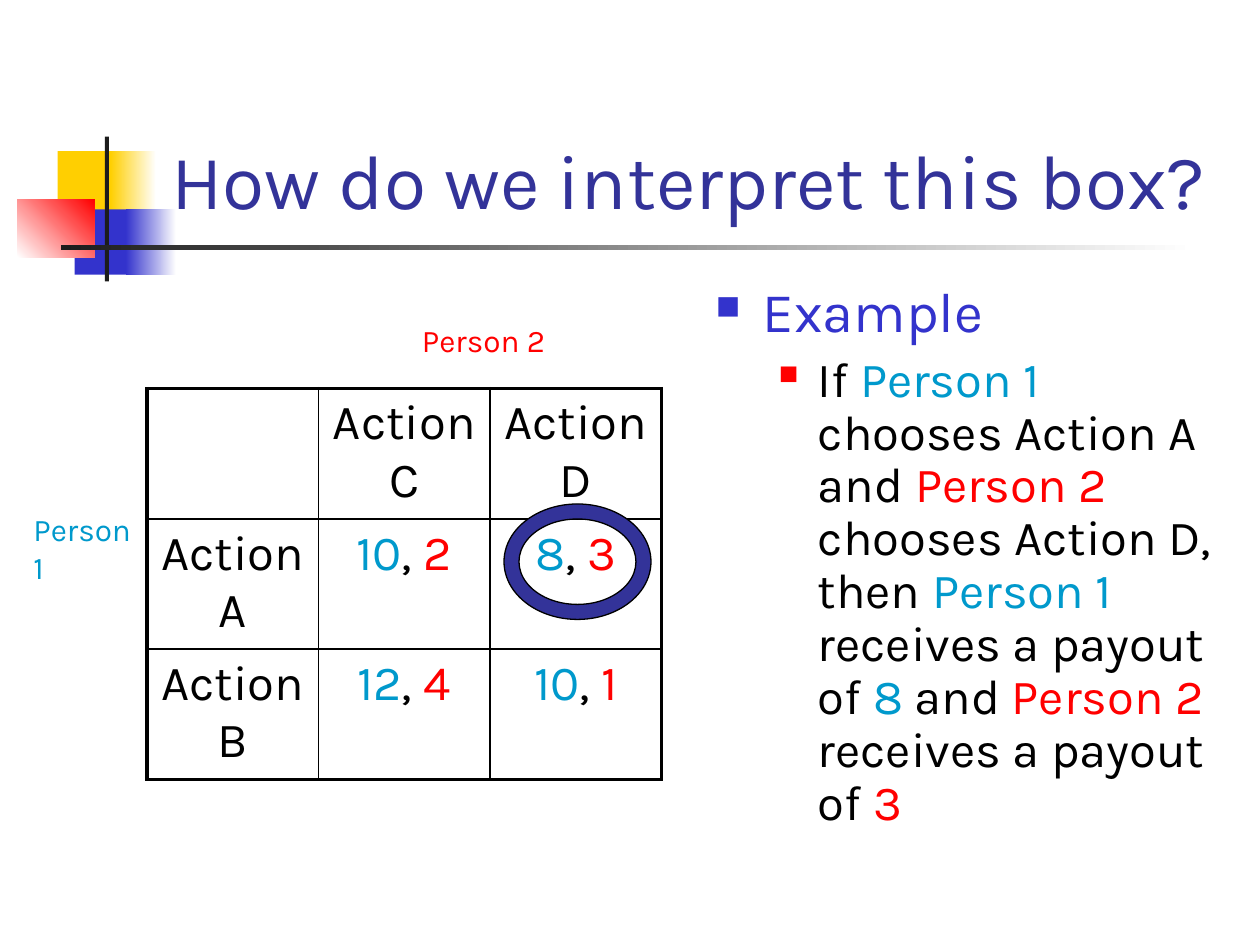
from lxml import etree
from pptx import Presentation
from pptx import util as u
from pptx.dml.color import RGBColor
from pptx.enum import shapes, text
from pptx.oxml.ns import qn

Pt = u.Pt

THEME = {
    "font": "Karla",
    "title": "333399", "heading": "3333CC", "body": "000000",
    "person 1": "0099CC", "person 2": "FF0000",
    "yellow": "FFCF01", "blue": "3333CC", "red": "FF0000",
    "dark": "1C1C1C", "white": "FFFFFF",
    "title size": 44, "heading size": 32, "body size": 28, "label size": 18,
}

# Runs are (words, colour name); boxes are left, top, width, height.
TITLE = [("How do we interpret this box?", "title")]
HEADING = [("Example", "heading")]
EXPLANATION = [
    ("If ", "body"), ("Person 1", "person 1"),
    (" chooses Action A and ", "body"), ("Person 2", "person 2"),
    (" chooses Action D, then ", "body"), ("Person 1", "person 1"),
    (" receives a payout of ", "body"), ("8", "person 1"),
    (" and ", "body"), ("Person 2", "person 2"),
    (" receives a payout of ", "body"), ("3", "person 2"),
]
COLUMN_ACTIONS = ["Action C", "Action D"]
PAYOUTS = [("Action A", [(10, 2), (8, 3)]), ("Action B", [(12, 4), (10, 1)])]
LABELS = [("Person 1", "person 1", (12, 288, 72, 50.4)),
          ("Person 2", "person 2", (234, 180, 102, 28.8))]

# Box, start colour, end colour (None for a solid fill), angle.
DECORATION = [
    ((33, 86.4, 34.6, 37.4), "yellow", None, 0),
    ((63.2, 86.4, 26, 37.4), "yellow", "white", 0),
    ((42.6, 119.6, 33, 37.4), "blue", None, 0),
    ((72, 119.6, 28.8, 37.4), "blue", "white", 0),
    ((10, 113.8, 44, 33.2), "white", "red", 45),
    ((60, 78, 2.2, 82.8), "dark", None, 0),
    ((34.8, 140.2, 648, 2.4), "dark", "white", 0),
]
TABLE_BOX = (84, 222, 294, 223.2)
RING_BOX = (288, 288, 84, 66)
OUTER_BORDER, INNER_BORDER = 2.25, 1


def colour(name):
    return RGBColor.from_string(THEME[name])


def points(box):
    return [Pt(length) for length in box]


def add_runs(paragraph, runs, size):
    for words, colour_name in runs:
        run = paragraph.add_run()
        run.text = words
        run.font.name = THEME["font"]
        run.font.size = Pt(THEME[size])
        run.font.color.rgb = colour(colour_name)


def add_text_frame(slide, box, anchor=text.MSO_ANCHOR.TOP):
    frame = slide.shapes.add_textbox(*points(box)).text_frame
    frame.word_wrap = True
    frame.vertical_anchor = anchor
    return frame


def add_bullet(paragraph, left, hanging, colour_name, percent):
    properties = paragraph._p.get_or_add_pPr()
    properties.set("marL", str(Pt(left)))
    properties.set("indent", str(-Pt(hanging)))
    bullet_colour = etree.SubElement(properties, qn("a:buClr"))
    etree.SubElement(bullet_colour, qn("a:srgbClr"), val=THEME[colour_name])
    etree.SubElement(properties, qn("a:buSzPct"), val=str(percent * 1000))
    etree.SubElement(properties, qn("a:buChar"), char="■")
    paragraph.line_spacing = 0.9


def add_decoration(slide):
    for box, start, end, angle in DECORATION:
        shape = slide.shapes.add_shape(shapes.MSO_SHAPE.RECTANGLE, *points(box))
        shape.shadow.inherit = False
        shape.line.fill.background()
        if end is None:
            shape.fill.solid()
            shape.fill.fore_color.rgb = colour(start)
            continue
        shape.fill.gradient()
        shape.fill.gradient_angle = angle
        for stop, name in zip(shape.fill.gradient_stops, (start, end)):
            stop.color.rgb = colour(name)


def set_borders(cell, widths):
    """Draw the borders; widths are left, right, top, bottom."""
    properties = cell._tc.get_or_add_tcPr()
    for position, (side, width) in enumerate(zip("LRTB", widths)):
        line = etree.Element(qn(f"a:ln{side}"), w=str(Pt(width)))
        fill = etree.SubElement(line, qn("a:solidFill"))
        etree.SubElement(fill, qn("a:srgbClr"), val=THEME["body"])
        properties.insert(position, line)


def add_payout_table(slide):
    rows = [[[]] + [[(action, "body")] for action in COLUMN_ACTIONS]]
    for action, pairs in PAYOUTS:
        rows.append([[(action, "body")]] + [
            [(str(first), "person 1"), (", ", "body"), (str(second), "person 2")]
            for first, second in pairs])
    last_row, last_column = len(rows) - 1, len(rows[0]) - 1
    table = slide.shapes.add_table(
        len(rows), len(rows[0]), *points(TABLE_BOX)).table
    table.first_row = table.horz_banding = False
    for i, row in enumerate(rows):
        for j, runs in enumerate(row):
            cell = table.cell(i, j)
            cell.fill.background()
            edges = (j == 0, j == last_column, i == 0, i == last_row)
            set_borders(cell, [OUTER_BORDER if edge else INNER_BORDER
                               for edge in edges])
            paragraph = cell.text_frame.paragraphs[0]
            paragraph.alignment = text.PP_ALIGN.CENTER
            add_runs(paragraph, runs, "body size")


def add_example(slide):
    frame = add_text_frame(slide, (401.8, 159, 303, 324))
    heading = frame.paragraphs[0]
    add_bullet(heading, 27, 27, "blue", 60)
    add_runs(heading, HEADING, "heading size")
    explanation = frame.add_paragraph()
    explanation.level = 1
    add_bullet(explanation, 58.5, 22.5, "red", 55)
    explanation.space_before = Pt(5.6)
    add_runs(explanation, EXPLANATION, "body size")


def add_ring(slide):
    ring = slide.shapes.add_shape(shapes.MSO_SHAPE.DONUT, *points(RING_BOX))
    ring.adjustments[0] = 0.13
    ring.shadow.inherit = False
    ring.fill.solid()
    ring.fill.fore_color.rgb = colour("title")
    ring.line.color.rgb = colour("body")
    ring.line.width = Pt(0.75)


def main():
    presentation = Presentation()
    presentation.slide_width, presentation.slide_height = Pt(720), Pt(540)
    slide = presentation.slides.add_slide(presentation.slide_layouts[6])
    add_decoration(slide)
    title = add_text_frame(slide, (90.7, 16.6, 613.4, 115.2),
                           text.MSO_ANCHOR.BOTTOM)
    add_runs(title.paragraphs[0], TITLE, "title size")
    add_example(slide)
    add_payout_table(slide)
    for words, colour_name, box in LABELS:
        label = add_text_frame(slide, box)
        add_runs(label.paragraphs[0], [(words, colour_name)], "label size")
    add_ring(slide)
    presentation.save("out.pptx")


if __name__ == "__main__":
    main()
